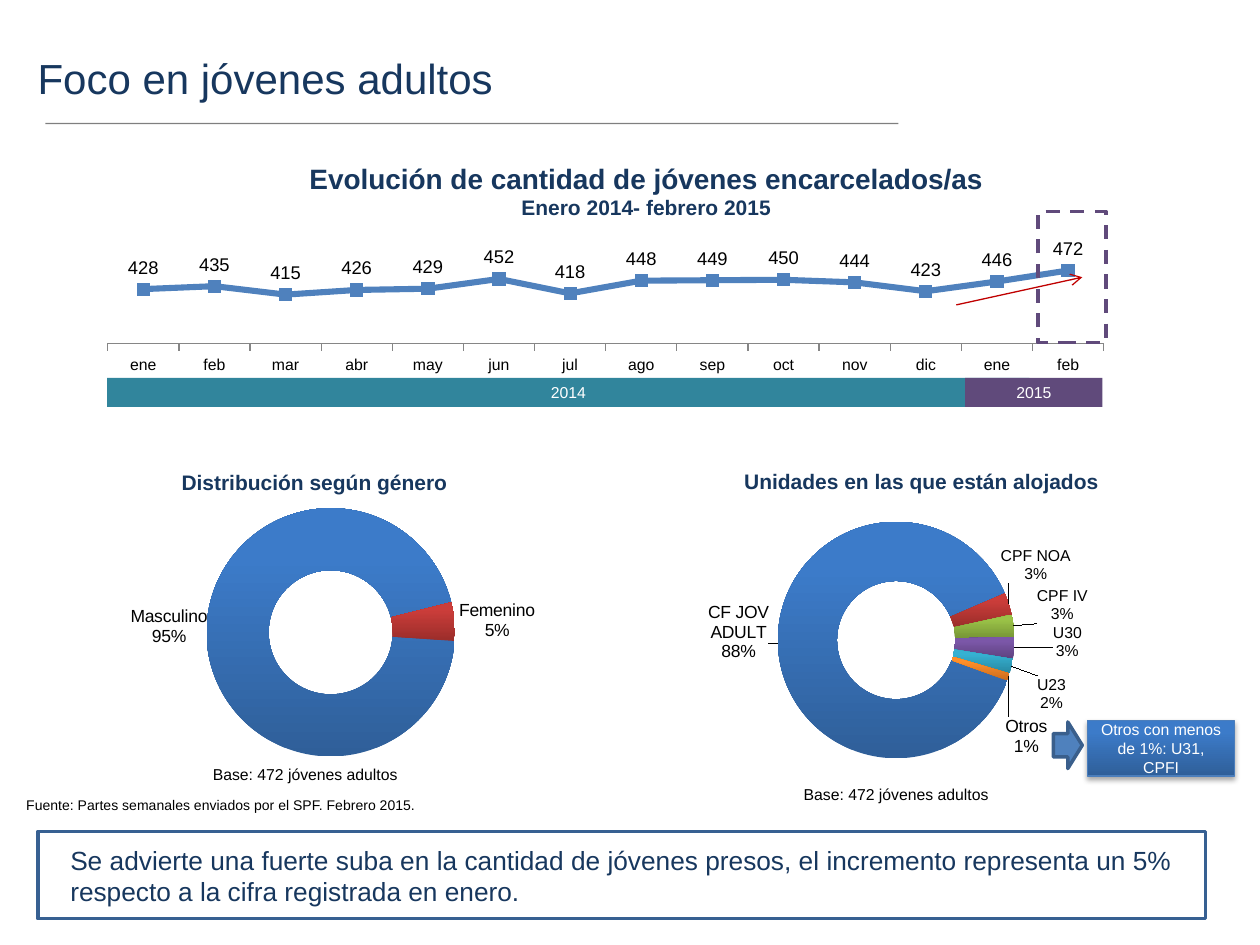
from pptx import Presentation
from pptx.chart.data import CategoryChartData
from pptx.dml.color import RGBColor
from pptx.enum.chart import XL_CHART_TYPE as Kind, XL_LABEL_POSITION as Spot
from pptx.enum.chart import XL_MARKER_STYLE as Mark, XL_TICK_MARK as Tick
from pptx.enum.dml import MSO_LINE as Dash
from pptx.enum.shapes import MSO_CONNECTOR as Link, MSO_SHAPE as Shape
from pptx.enum.text import MSO_ANCHOR as Anchor, PP_ALIGN as Align
from pptx.oxml import parse_xml
from pptx.oxml.ns import nsdecls, qn
from pptx.util import Emu, Pt

PX = 9144  # EMU, 100 px to the inch
FONT = "Arial"
BLACK = RGBColor(0x00, 0x00, 0x00)
WHITE = RGBColor(0xFF, 0xFF, 0xFF)
NAVY = RGBColor(0x17, 0x37, 0x5E)
BLUE = RGBColor(0x4F, 0x81, 0xBD)
FRAME = RGBColor(0x37, 0x60, 0x92)
EDGE = RGBColor(0x3A, 0x5F, 0x8C)
RIM = RGBColor(0x4B, 0x7E, 0xBC)
TEAL = RGBColor(0x31, 0x85, 0x9C)
PLUM = RGBColor(0x60, 0x4A, 0x7B)
RED = RGBColor(0xC0, 0x00, 0x00)
GREY = RGBColor(0x86, 0x86, 0x86)
# Dark foot and light head of each slice
SHADES = [
    (RGBColor(0x2F, 0x5F, 0x99), RGBColor(0x3C, 0x7B, 0xC9)),
    (RGBColor(0x9B, 0x2D, 0x2A), RGBColor(0xCB, 0x3D, 0x3A)),
    (RGBColor(0x76, 0x95, 0x35), RGBColor(0x9B, 0xC3, 0x48)),
    (RGBColor(0x5D, 0x41, 0x7E), RGBColor(0x7B, 0x57, 0xA8)),
    (RGBColor(0x27, 0x87, 0xA0), RGBColor(0x36, 0xB1, 0xD2)),
    (RGBColor(0xCB, 0x6C, 0x1D), RGBColor(0xFF, 0x8F, 0x2A)),
]


def px(*sizes):
    return [Emu(size * PX) for size in sizes]


def write(frame, rows, color, align=Align.LEFT, bold=False, wrap=True):
    """Fill a text frame with (text, size) rows."""
    frame.word_wrap = wrap
    for i, (text, size) in enumerate(rows):
        para = frame.add_paragraph() if i else frame.paragraphs[0]
        para.text, para.alignment = text, align
        font = para.font
        font.name, font.size, font.bold = FONT, Pt(size), bold
        font.color.rgb = color


def label(slide, box, rows, color=NAVY, **style):
    write(slide.shapes.add_textbox(*px(*box)).text_frame, rows, color, **style)


def block(slide, box, kind=Shape.RECTANGLE, fill=None, line=None, width=2):
    shape = slide.shapes.add_shape(kind, *px(*box))
    shape.shadow.inherit = False
    if fill:
        shape.fill.solid()
        shape.fill.fore_color.rgb = fill
    else:
        shape.fill.background()
    if line:
        shape.line.color.rgb, shape.line.width = line, Pt(width)
    else:
        shape.line.fill.background()
    return shape


def band(slide, box, text, fill):
    frame = block(slide, box, fill=fill).text_frame
    frame.vertical_anchor = Anchor.MIDDLE
    write(frame, [(text, 9)], WHITE, Align.CENTER)


def rule(slide, ends, color):
    line = slide.shapes.add_connector(Link.STRAIGHT, *px(*ends))
    line.line.color.rgb, line.line.width = color, Pt(0.75)
    line._element.spPr.append(parse_xml(f"<a:effectLst {nsdecls('a')}/>"))
    return line.line._get_or_add_ln()


def shade(fill, pair):
    fill.gradient()
    fill.gradient_angle = 90
    for stop, color, spot in zip(fill.gradient_stops, pair, (0, 0.8)):
        stop.color.rgb, stop.position = color, spot


def layout(x, y, size=""):
    return (f"<c:layout {nsdecls('c')}><c:manualLayout>{size}"
            f'<c:x val="{x}"/><c:y val="{y}"/>%s</c:manualLayout></c:layout>')


def graph(slide, box, kind, cats, vals, area):
    """Add a one-series chart whose inner plot fills the given fractions."""
    data = CategoryChartData()
    data.categories = cats
    data.add_series("Series 1", vals)
    chart = slide.shapes.add_chart(kind, *px(*box), data).chart
    chart.has_title = chart.has_legend = False
    chart.font.name, chart.font.size = FONT, Pt(10)
    chart.font.color.rgb = BLACK
    plot = chart._chartSpace.chart.plotArea
    for old in plot.findall(qn("c:layout")):
        plot.remove(old)
    x, y, w, h = area
    modes = ('<c:layoutTarget val="inner"/><c:xMode val="edge"/>'
             '<c:yMode val="edge"/>')
    size = f'<c:w val="{w}"/><c:h val="{h}"/>'
    plot.insert(0, parse_xml(layout(x, y, modes) % size))
    return chart


def header(slide, x, y):
    label(slide, (x, y, 740, 62), [("Foco en jóvenes adultos", 24)])
    ln = rule(slide, (x + 16, y + 61, x + 693, y + 61), BLACK)
    ln.find(".//" + qn("a:srgbClr")).append(
        parse_xml(f'<a:alpha {nsdecls("a")} val="50000"/>'))


def trend(slide, x, y):
    """Monthly line with its title, year bands and marked last month."""
    cats = "ene feb mar abr may jun jul ago sep oct nov dic ene feb".split()
    vals = [428, 435, 415, 426, 429, 452, 418, 448, 449, 450, 444, 423,
            446, 472]
    chart = graph(slide, (x, y + 61, 850, 164), Kind.LINE_MARKERS, cats, vals,
                  (0.03, 0.13, 0.93, 0.41))
    axis = chart.value_axis
    axis.minimum_scale, axis.maximum_scale = 300, 500
    axis.has_major_gridlines = axis.visible = False
    axis = chart.category_axis
    axis.major_tick_mark = Tick.OUTSIDE
    axis.tick_labels.font.size = Pt(9)
    axis.format.line.color.rgb = GREY
    plot = chart.plots[0]
    plot.vary_by_categories = False
    line = plot.series[0]
    line.smooth = False
    line.format.line.color.rgb, line.format.line.width = BLUE, Pt(3.5)
    line.marker.style, line.marker.size = Mark.SQUARE, 7
    line.marker.format.fill.solid()
    line.marker.format.fill.fore_color.rgb = BLUE
    line.marker.format.line.color.rgb = BLUE
    tags = line.data_labels
    tags.show_value, tags.position = True, Spot.ABOVE
    tags.font.name, tags.font.size = FONT, Pt(10.5)

    label(slide, (x + 146, y, 614, 57),
          [("Evolución de cantidad de jóvenes encarcelados/as", 16),
           ("Enero 2014- febrero 2015", 12)], align=Align.CENTER, bold=True)
    band(slide, (x + 25, y + 177, 732, 23), "2014", TEAL)
    band(slide, (x + 706, y + 177, 109, 23), "2015", PLUM)
    mark = block(slide, (x + 764, y + 45, 54, 104), line=PLUM)
    mark.line.dash_style = Dash.DASH
    ln = rule(slide, (x + 699, y + 119, x + 799, y + 97), RED)
    ln.append(parse_xml(f'<a:tailEnd {nsdecls("a")} type="arrow"/>'))


def ring(slide, box, area, start, slices):
    """Doughnut; each slice is name, share, label size and label shift."""
    cats, vals, sizes, shifts = zip(*slices)
    chart = graph(slide, box, Kind.DOUGHNUT, cats, vals, area)
    plot = chart.plots[0]
    plot.vary_by_categories = True
    plot._element.find(qn("c:firstSliceAng")).set("val", str(start))
    plot._element.find(qn("c:holeSize")).set("val", "50")
    series = plot.series[0]
    tags = series.data_labels
    tags.show_value = False
    tags.show_category_name = tags.show_percentage = True
    tags.font.name, tags.font.size = FONT, Pt(10)
    flags = {"LegendKey": 0, "Val": 0, "CatName": 1, "SerName": 0,
             "Percent": 1, "BubbleSize": 0}
    shows = "".join(f'<c:show{k} val="{v}"/>' for k, v in flags.items())
    for i, (size, shift) in enumerate(zip(sizes, shifts)):
        fmt = series.points[i].format
        shade(fmt.fill, SHADES[i])
        fmt.line.fill.background()
        tags._element.insert(i, parse_xml(
            f'<c:dLbl {nsdecls("c", "a")}><c:idx val="{i}"/>'
            f'{layout(*shift) % ""}<c:txPr><a:bodyPr/><a:p><a:pPr>'
            f'<a:defRPr sz="{size * 100}"><a:latin typeface="{FONT}"/>'
            f'</a:defRPr></a:pPr><a:endParaRPr lang="es"/></a:p></c:txPr>'
            f'{shows}<c:separator>\n</c:separator></c:dLbl>'))


def share(slide, x, y, title, head, base, *parts):
    """Doughnut with its heading and base note, both given as boxes."""
    ring(slide, (x, y, 365, 272), *parts)
    hx, hy, hw = head
    label(slide, (x + hx, y + hy, hw, 30), [(title, 12)], align=Align.RIGHT,
          bold=True)
    bx, by = base
    label(slide, (x + bx, y + by, 168, 25),
          [("Base: 472 jóvenes adultos", 9)], BLACK, wrap=False)


def others(slide, x, y):
    """Arrow and shaded box that explain the last slice."""
    card = block(slide, (x + 27, y, 117, 44), line=RIM, width=0.75)
    shade(card.fill, SHADES[0])
    card._element.spPr.find(qn("a:effectLst")).append(parse_xml(
        f'<a:outerShdw {nsdecls("a")} blurRad="40000" dist="23000" '
        'dir="5400000" rotWithShape="0"><a:srgbClr val="000000">'
        '<a:alpha val="35000"/></a:srgbClr></a:outerShdw>'))
    card.text_frame.vertical_anchor = Anchor.MIDDLE
    write(card.text_frame, [("Otros con menos de 1%: U31, CPFI", 9)], WHITE,
          Align.CENTER)
    block(slide, (x, y + 1, 23, 37), Shape.RIGHT_ARROW, BLUE, EDGE)


def footer(slide, x, y):
    note = block(slide, (x, y, 331, 24), fill=WHITE)
    write(note.text_frame, [("Fuente: Partes semanales enviados por el SPF. "
                             "Febrero 2015.", 8)], BLACK, wrap=False)
    block(slide, (x + 19, y + 33, 927, 69), line=FRAME)
    label(slide, (x + 35, y + 38, 894, 61),
          [("Se advierte una fuerte suba en la cantidad de jóvenes presos, "
            "el incremento representa un 5% respecto a la cifra registrada "
            "en enero.", 15)], align=Align.JUSTIFY)


def main():
    deck = Presentation()
    deck.slide_width, deck.slide_height = px(1000, 750)
    slide = deck.slides.add_slide(deck.slide_layouts[6])
    header(slide, 20, 37)
    trend(slide, 60, 123)
    share(slide, 80, 370, "Distribución según género", (16, -2, 269),
          (79, 232), (0.23, 0.12, 0.54, 0.73), 94,
          [("Masculino", 95, 10, (-0.15, -0.04)),
           ("Femenino", 5, 10, (0.16, -0.01))])
    share(slide, 547, 368, "Unidades en las que están alojados",
          (-20, -1, 355), (81, 250), (0.19, 0.17, 0.52, 0.69), 110,
          [("CF JOV ADULT", 88, 10, (-0.15, -0.03)),
           ("CPF NOA", 3, 9, (0.12, -0.14)),
           ("CPF IV", 3, 9, (0.17, -0.07)),
           ("U30", 3, 9, (0.18, -0.01)),
           ("U23", 2, 9, (0.15, 0.1)),
           ("Otros", 1, 10, (0.1, 0.2))])
    others(slide, 836, 572)
    footer(slide, 11, 627)
    deck.save("out.pptx")


if __name__ == "__main__":
    main()
